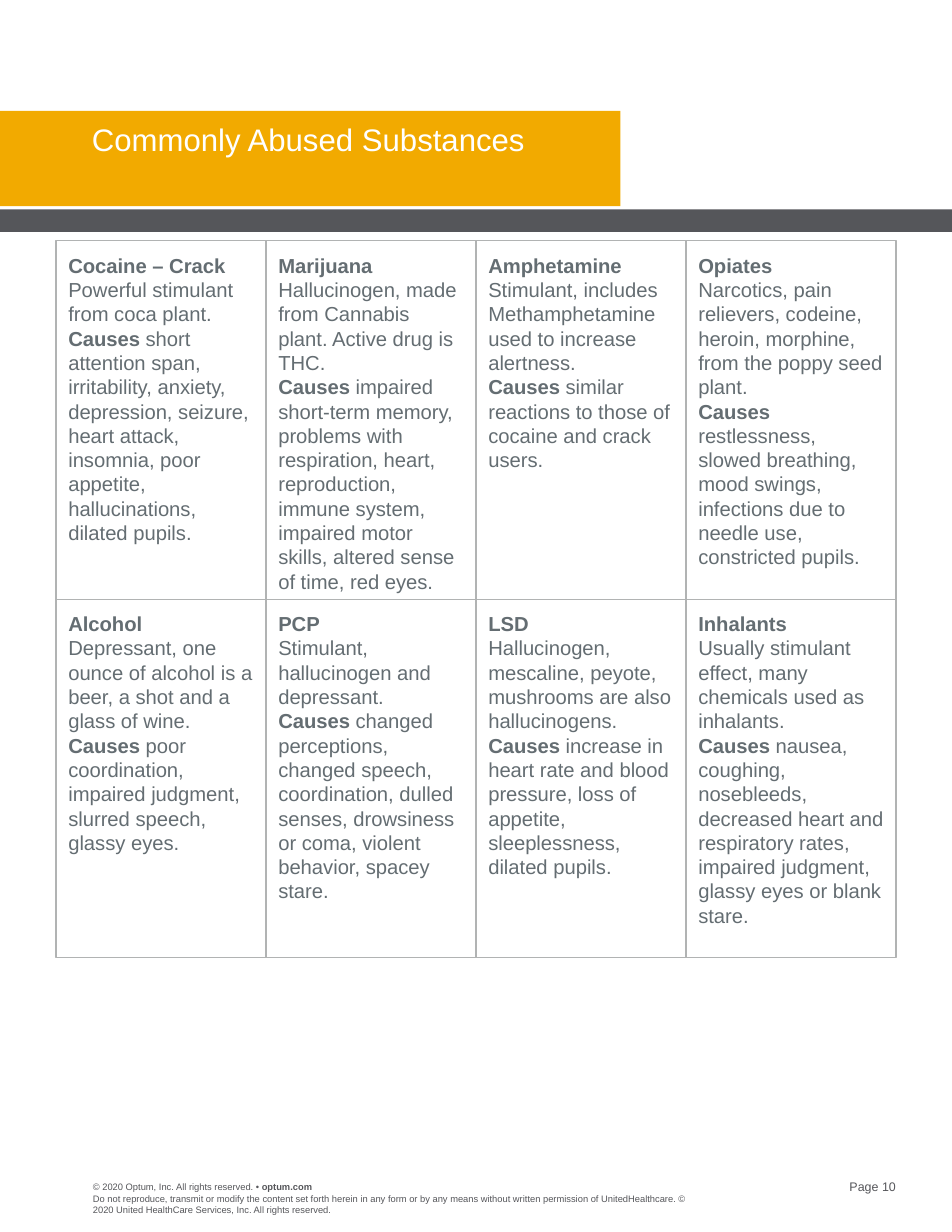
from pptx import Presentation
from pptx.dml.color import RGBColor
from pptx.enum.shapes import MSO_SHAPE
from pptx.enum.text import MSO_ANCHOR, PP_ALIGN
from pptx.util import Inches, Pt

WHITE = RGBColor(0xFF, 0xFF, 0xFF)
AMBER = RGBColor(0xF2, 0xAA, 0x00)
CHARCOAL = RGBColor(0x55, 0x56, 0x5A)
SLATE = RGBColor(0x64, 0x6D, 0x72)
SILVER = RGBColor(0xB1, 0xB3, 0xB3)

WIDTH, HEIGHT = Inches(8.5), Inches(11)
COLUMNS, ROWS = 850, 1100
CARD_LEFT, CARD_TOP, CARD_WIDTH, CARD_HEIGHT = 50, 215, 187.5, 320
CARDS_PER_ROW = 4

SUBSTANCES = [
    ("Cocaine – Crack", "Powerful stimulant from coca plant.",
     "short attention span, irritability, anxiety, depression, seizure, heart attack, "
     "insomnia, poor appetite, hallucinations, dilated pupils."),
    ("Marijuana", "Hallucinogen, made from Cannabis plant. Active drug is THC.",
     "impaired short-term memory, problems with respiration, heart, reproduction, "
     "immune system, impaired motor skills, altered sense of time, red eyes."),
    ("Amphetamine", "Stimulant, includes Methamphetamine used to increase alertness.",
     "similar reactions to those of cocaine and crack users."),
    ("Opiates", "Narcotics, pain relievers, codeine, heroin, morphine, from the poppy seed plant.",
     "restlessness, slowed breathing, mood swings, infections due to needle use, "
     "constricted pupils."),
    ("Alcohol", "Depressant, one ounce of alcohol is a beer, a shot and a glass of wine.",
     "poor coordination, impaired judgment, slurred speech, glassy eyes."),
    ("PCP", "Stimulant, hallucinogen and depressant.",
     "changed perceptions, changed speech, coordination, dulled senses, drowsiness or "
     "coma, violent behavior, spacey stare."),
    ("LSD", "Hallucinogen, mescaline, peyote, mushrooms are also hallucinogens.",
     "increase in heart rate and blood pressure, loss of appetite, sleeplessness, "
     "dilated pupils."),
    ("Inhalants", "Usually stimulant effect, many chemicals used as inhalants.",
     "nausea, coughing, nosebleeds, decreased heart and respiratory rates, impaired "
     "judgment, glassy eyes or blank stare."),
]


class SlideBuilder:
    """Places styled elements on a slide by grid columns and rows."""

    def __init__(self, slide, font_name):
        self.slide = slide
        self.font_name = font_name

    def place(self, left, top, width, height):
        across, down = WIDTH / COLUMNS, HEIGHT / ROWS
        return [round(length) for length in
                (left * across, top * down, width * across, height * down)]

    def fill_frame(self, frame, paragraphs, size, color, margins=(0, 0, 0, 0), **layout):
        sides = ("margin_left", "margin_top", "margin_right", "margin_bottom")
        settings = {"word_wrap": True, "vertical_anchor": MSO_ANCHOR.TOP,
                    **dict(zip(sides, map(Inches, margins)))}
        for name, value in settings.items():
            setattr(frame, name, value)
        for index, spans in enumerate(paragraphs):
            para = frame.add_paragraph() if index else frame.paragraphs[0]
            for name, value in {"alignment": PP_ALIGN.LEFT, **layout}.items():
                setattr(para, name, value)
            for text, bold in spans:
                span = para.add_run()
                span.text = text
                span.font.color.rgb = color
                style = {"name": self.font_name, "size": Pt(size), "bold": bold}
                for name, value in style.items():
                    setattr(span.font, name, value)

    def text(self, area, spans, size, color, **layout):
        box = self.slide.shapes.add_textbox(*self.place(*area))
        self.fill_frame(box.text_frame, [spans], size, color, **layout)

    def rectangle(self, area):
        box = self.slide.shapes.add_shape(MSO_SHAPE.RECTANGLE, *self.place(*area))
        box.shadow.inherit = False
        return box

    def band(self, area, color):
        box = self.rectangle(area)
        box.fill.solid()
        box.fill.fore_color.rgb = color
        box.line.fill.background()

    def card(self, index, substance, description, effects):
        row, column = divmod(index, CARDS_PER_ROW)
        box = self.rectangle((CARD_LEFT + column * CARD_WIDTH, CARD_TOP + row * CARD_HEIGHT,
                              CARD_WIDTH, CARD_HEIGHT))
        box.fill.background()
        box.line.color.rgb = SILVER
        box.line.width = Pt(0.75)
        paragraphs = [[(substance, True)], [(description, False)],
                      [("Causes", True), (" " + effects, False)]]
        self.fill_frame(box.text_frame, paragraphs, 13, SLATE,
                        margins=(0.11, 0.11, 0.11, 0.14))


def main():
    deck = Presentation()
    deck.slide_width, deck.slide_height = WIDTH, HEIGHT
    page = SlideBuilder(deck.slides.add_slide(deck.slide_layouts[6]), "Arial")

    page.band((0, 99, 554, 85), AMBER)
    page.band((0, 187, COLUMNS, 20), CHARCOAL)
    page.text((82, 111, 450, 30), [("Commonly Abused Substances", False)], 20, WHITE,
              line_spacing=0.9)

    for index, substance in enumerate(SUBSTANCES):
        page.card(index, *substance)

    page.text((83, 1055, 200, 10),
              [("© 2020 Optum, Inc. All rights reserved. • ", False), ("optum.com", True)],
              6, CHARCOAL)
    page.text((83, 1065, 530, 20),
              [("Do not reproduce, transmit or modify the content set forth herein in any form "
                "or by any means without written permission of UnitedHealthcare. © 2020 United "
                "HealthCare Services, Inc. All rights reserved.", False)], 6, CHARCOAL)
    page.text((719, 1053, 81, 13), [("Page 10", False)], 8, CHARCOAL,
              alignment=PP_ALIGN.RIGHT)
    deck.save("out.pptx")


if __name__ == "__main__":
    main()
